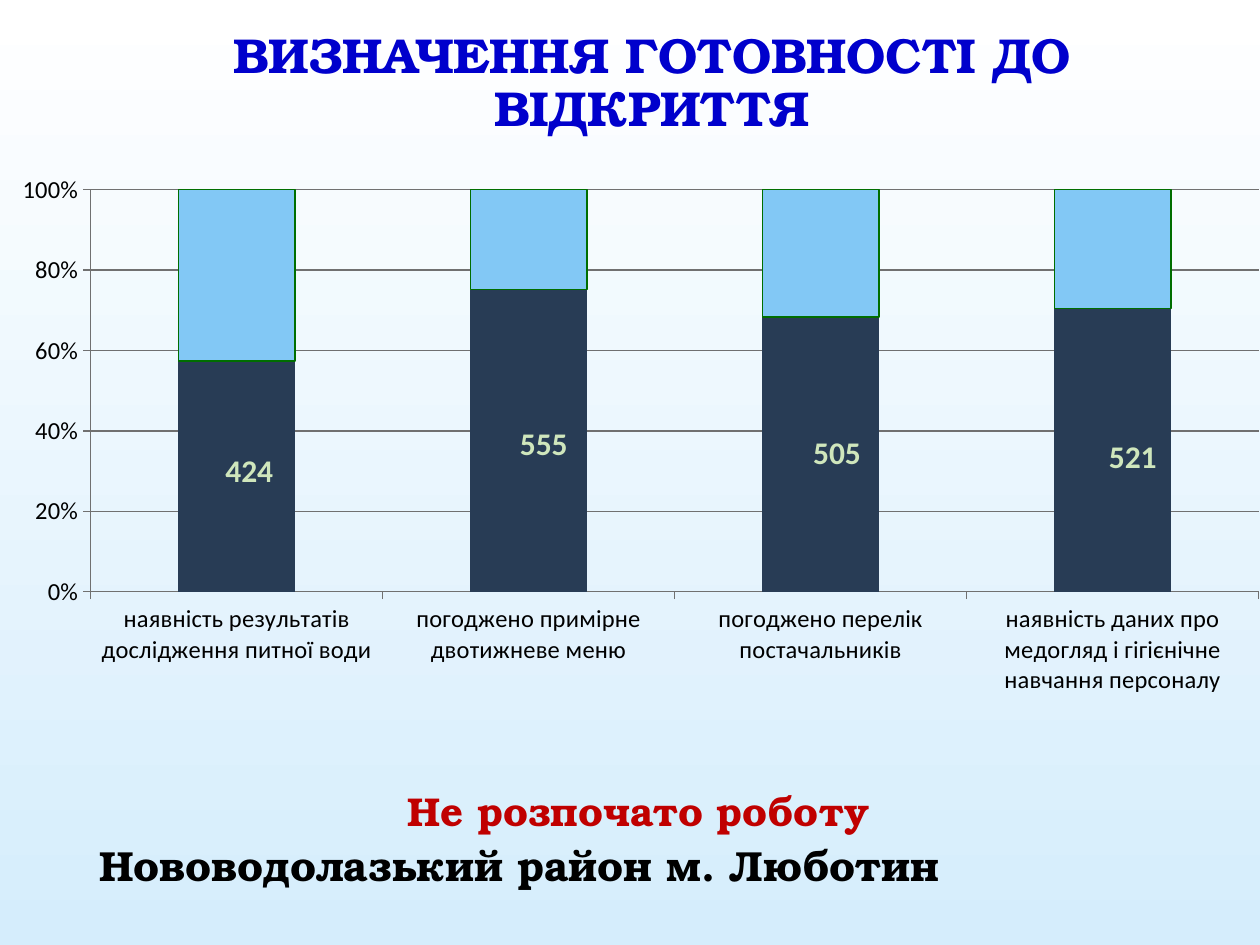
from dataclasses import dataclass

from lxml.etree import SubElement
from pptx import Presentation
from pptx.chart.data import CategoryChartData
from pptx.dml.color import RGBColor
from pptx.enum.chart import XL_CHART_TYPE, XL_TICK_MARK
from pptx.enum.text import MSO_ANCHOR, PP_ALIGN
from pptx.oxml.ns import qn
from pptx.util import Inches, Pt

WHITE = RGBColor(0xFF, 0xFF, 0xFF)
SKY = RGBColor(0xD5, 0xED, 0xFC)
BLUE = RGBColor(0x00, 0x00, 0xCC)
RED = RGBColor(0xC0, 0x00, 0x00)
BLACK = RGBColor(0x00, 0x00, 0x00)
GRAY = RGBColor(0x70, 0x70, 0x70)
NAVY = RGBColor(0x28, 0x3C, 0x55)
LIGHT_BLUE = RGBColor(0x82, 0xC8, 0xF5)
GREEN = RGBColor(0x00, 0x6E, 0x00)
PALE_GREEN = RGBColor(0xCF, 0xE6, 0xBC)
SERIF, SANS = "TeX Gyre Bonum", "Calibri"
CHART_WIDTH, CHART_HEIGHT = 10, 5.14


@dataclass
class Line:
    text: str
    size: int
    color: RGBColor
    align: PP_ALIGN = PP_ALIGN.CENTER
    spacing: float = 1.0
    indent: float = 0.0
    tab: float = 0.0


@dataclass
class Category:
    name: str
    ready: int
    not_ready: int
    label_shift: tuple[float, float]  # inches right and down


CATEGORIES = [
    Category("наявність результатів дослідження питної води", 424, 315, (0.1, -0.04)),
    Category("погоджено примірне двотижневе меню", 555, 184, (0.12, 0.03)),
    Category("погоджено перелік постачальників", 505, 234, (0.13, -0.01)),
    Category("наявність даних про медогляд і гігієнічне навчання персоналу",
             521, 218, (0.16, 0.06)),
]


def add_text(page, left: float, top: float, width: float, height: float,
             lines: list[Line], anchor: MSO_ANCHOR) -> None:
    box = page.shapes.add_textbox(Inches(left), Inches(top), Inches(width), Inches(height))
    frame = box.text_frame
    frame.word_wrap = True
    frame.vertical_anchor = anchor
    for index, line in enumerate(lines):
        para = frame.add_paragraph() if index else frame.paragraphs[0]
        para.text = line.text
        para.alignment = line.align
        para.line_spacing = line.spacing
        if index:
            para.space_before = Pt(3)
        properties = para._p.get_or_add_pPr()
        if line.indent:
            properties.set("marL", str(Inches(line.indent)))
            properties.set("indent", "0")
        if line.tab:
            tab_list = SubElement(properties, qn("a:tabLst"))
            SubElement(tab_list, qn("a:tab"), pos=str(Inches(line.tab)), algn="l")
        font = para.font
        font.name, font.size, font.bold = SERIF, Pt(line.size), True
        font.color.rgb = line.color


def add_manual_layout(layout, **settings) -> None:
    manual = SubElement(layout, qn("c:manualLayout"))
    for name, value in settings.items():
        SubElement(manual, qn(f"c:{name}")).set("val", str(value))


def style_line(line, color: RGBColor) -> None:
    line.color.rgb = color
    line.width = Pt(0.75)


def style_axis(axis) -> None:
    axis.major_tick_mark = XL_TICK_MARK.OUTSIDE
    axis.tick_labels.font.size = Pt(14)
    style_line(axis.format.line, GRAY)


def style_label_font(font) -> None:
    font.size, font.bold = Pt(18), True
    font.color.rgb = PALE_GREEN


def shift_label(series, index: int, shift: tuple[float, float]) -> None:
    style_label_font(series.points[index].data_label.font)
    label = series._element.findall(".//" + qn("c:dLbl"))[index]
    layout = SubElement(label, qn("c:layout"))
    label.insert(1, layout)
    add_manual_layout(layout, x=shift[0] / CHART_WIDTH, y=shift[1] / CHART_HEIGHT)


def add_readiness_chart(page) -> None:
    data = CategoryChartData()
    data.categories = [category.name for category in CATEGORIES]
    data.add_series("Series 1", [category.ready for category in CATEGORIES])
    data.add_series("Series 2", [category.not_ready for category in CATEGORIES])
    chart = page.shapes.add_chart(XL_CHART_TYPE.COLUMN_STACKED_100, Inches(0), Inches(1.29),
                                  Inches(CHART_WIDTH), Inches(CHART_HEIGHT), data).chart
    chart.has_title = chart.has_legend = False
    chart.font.name, chart.font.size = SANS, Pt(18)
    chart.font.color.rgb = BLACK

    # Plot area
    plot_area = chart._chartSpace.find(".//" + qn("c:plotArea"))
    for old_layout in plot_area.findall(qn("c:layout")):
        plot_area.remove(old_layout)
    layout = SubElement(plot_area, qn("c:layout"))
    plot_area.insert(0, layout)
    add_manual_layout(layout, layoutTarget="inner", xMode="edge", yMode="edge",
                      x=0.072, y=0.042, w=0.927, h=0.621)

    # Axes
    style_axis(chart.category_axis)
    axis = chart.value_axis
    style_axis(axis)
    axis.minimum_scale, axis.maximum_scale, axis.major_unit = 0, 1, 0.2
    axis.tick_labels.number_format = "0%"
    axis.tick_labels.number_format_is_linked = False
    axis.has_major_gridlines = True
    style_line(axis.major_gridlines.format.line, GRAY)

    # Columns and value labels
    plot = chart.plots[0]
    plot.vary_by_categories = False
    plot.gap_width, plot.overlap = 150, 100
    for series, color in zip(plot.series, (NAVY, LIGHT_BLUE)):
        series.format.fill.solid()
        series.format.fill.fore_color.rgb = color
    ready, not_ready = plot.series
    style_line(not_ready.format.line, GREEN)
    ready.data_labels.show_value = True
    style_label_font(ready.data_labels.font)
    for index, category in enumerate(CATEGORIES):
        shift_label(ready, index, category.label_shift)


def main() -> None:
    deck = Presentation()
    deck.slide_width, deck.slide_height = Inches(10), Inches(7.5)
    page = deck.slides.add_slide(deck.slide_layouts[6])

    # Background gradient, top to bottom
    fill = page.background.fill
    fill.gradient()
    fill.gradient_angle = 270
    for stop, position, color in zip(fill.gradient_stops, (0, 1), (WHITE, SKY)):
        stop.position = position
        stop.color.rgb = color

    add_readiness_chart(page)

    # Districts that have not started
    add_text(page, 0.62, 6.19, 8.83, 1.15, [
        Line("Не розпочато роботу", 23, RED, indent=0.07),
        Line("Нововодолазький район\tм. Люботин", 24, BLACK, PP_ALIGN.LEFT,
             indent=0.07, tab=6),
    ], MSO_ANCHOR.TOP)

    # Title
    add_text(page, 1.22, 0.05, 7.91, 1.24, [
        Line("ВИЗНАЧЕННЯ ГОТОВНОСТІ ДО ВІДКРИТТЯ", 28, BLUE, spacing=0.9),
    ], MSO_ANCHOR.MIDDLE)

    deck.save("out.pptx")


if __name__ == "__main__":
    main()
